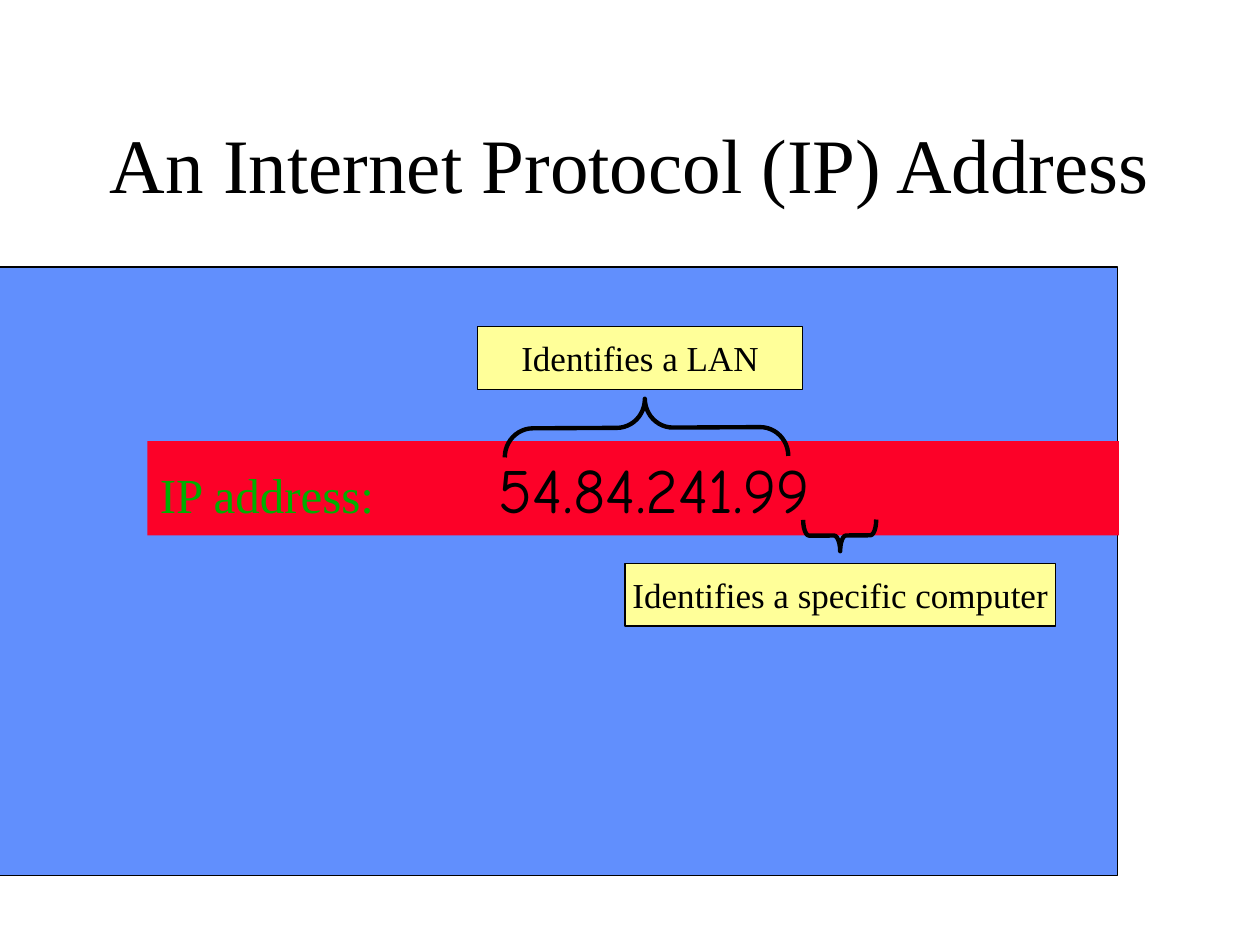
from lxml.etree import SubElement
from pptx import Presentation
from pptx.dml.color import RGBColor
from pptx.enum.shapes import MSO_SHAPE
from pptx.enum.text import MSO_ANCHOR, PP_ALIGN
from pptx.oxml.ns import qn
from pptx.util import Inches, Pt

COLORS = {
    "ink": "000000",
    "panel": "618FFD",
    "band": "FC0128",
    "label": "FFFF99",
    "caption": "00AE00",
}
SERIF = "Times New Roman"
ROUNDED = "Comic Neue"


def color(name):
    """Return the named colour."""
    return RGBColor.from_string(COLORS[name])


def style_span(span, size, font=SERIF, ink="ink"):
    """Format one run of text."""
    span.font.size = Pt(size)
    span.font.name = font
    span.font.color.rgb = color(ink)


def add_outline(page, kind, box, fill=None, line=None):
    """Add a preset shape with a plain fill and a black outline."""
    shape = page.shapes.add_shape(kind, *[Inches(length) for length in box])
    shape.shadow.inherit = False
    if fill:
        shape.fill.solid()
        shape.fill.fore_color.rgb = color(fill)
    else:
        shape.fill.background()
    if line:
        shape.line.color.rgb = color("ink")
        shape.line.width = Pt(line)
    else:
        shape.line.fill.background()
    return shape


def add_title(page, box, text):
    """Place the centred title."""
    title = page.shapes.title
    title.left, title.top, title.width, title.height = [Inches(length) for length in box]
    frame = title.text_frame
    frame.text = text
    frame.word_wrap = True
    frame.vertical_anchor = MSO_ANCHOR.MIDDLE
    para = frame.paragraphs[0]
    para.alignment = PP_ALIGN.CENTER
    style_span(para.runs[0], 44)


def add_address_band(page, box, caption, address):
    """Draw the band with the caption and the address at a tab stop."""
    band = add_outline(page, MSO_SHAPE.RECTANGLE, box, "band")
    frame = band.text_frame
    frame.word_wrap = True
    frame.vertical_anchor = MSO_ANCHOR.MIDDLE
    para = frame.paragraphs[0]
    para.alignment = PP_ALIGN.LEFT
    tabs = SubElement(para._p.get_or_add_pPr(), qn("a:tabLst"))
    SubElement(tabs, qn("a:tab"), pos=str(Inches(2.69)), algn="l")
    for text, size, font, ink in (
        (caption + "\t", 28, SERIF, "caption"),
        (address, 36, ROUNDED, "ink"),
    ):
        span = para.add_run()
        span.text = text
        style_span(span, size, font, ink)


def add_label(page, box, text):
    """Draw a yellow label with centred text."""
    label = add_outline(page, MSO_SHAPE.RECTANGLE, box, "label", 0.75)
    frame = label.text_frame
    frame.text = text
    frame.word_wrap = False
    frame.vertical_anchor = MSO_ANCHOR.MIDDLE
    para = frame.paragraphs[0]
    para.alignment = PP_ALIGN.CENTER
    style_span(para.runs[0], 20)


def add_brace(page, box, rotation, curl):
    """Draw a turned brace that points at a label."""
    brace = add_outline(page, MSO_SHAPE.LEFT_BRACE, box, line=2.5)
    brace.rotation = rotation
    brace.adjustments[0] = curl
    brace.adjustments[1] = 0.505


def build_address_slide(page):
    """Lay out the slide on the parts of an IP address."""
    add_title(page, (0.75, 0.67, 8.5, 1.25), "An Internet Protocol (IP) Address")
    add_outline(page, MSO_SHAPE.RECTANGLE, (-0.13, 2.12, 9, 4.83), "panel", 0.75)
    add_address_band(page, (1.17, 3.5, 7.71, 0.75), "IP address:", "54.84.241.99")
    add_label(page, (3.79, 2.59, 2.58, 0.5), "Identifies a LAN")
    add_brace(page, (6.54, 3.96, 0.25, 0.58), 269.7, 0.19)
    add_brace(page, (4.9, 2.27, 0.46, 2.25), 89.7, 0.485)
    add_label(page, (4.96, 4.47, 3.42, 0.5), "Identifies a specific computer")


def main():
    """Build and save the deck."""
    deck = Presentation()
    deck.slide_width, deck.slide_height = Inches(10), Inches(7.5)
    build_address_slide(deck.slides.add_slide(deck.slide_layouts[5]))
    deck.save("out.pptx")


if __name__ == "__main__":
    main()
